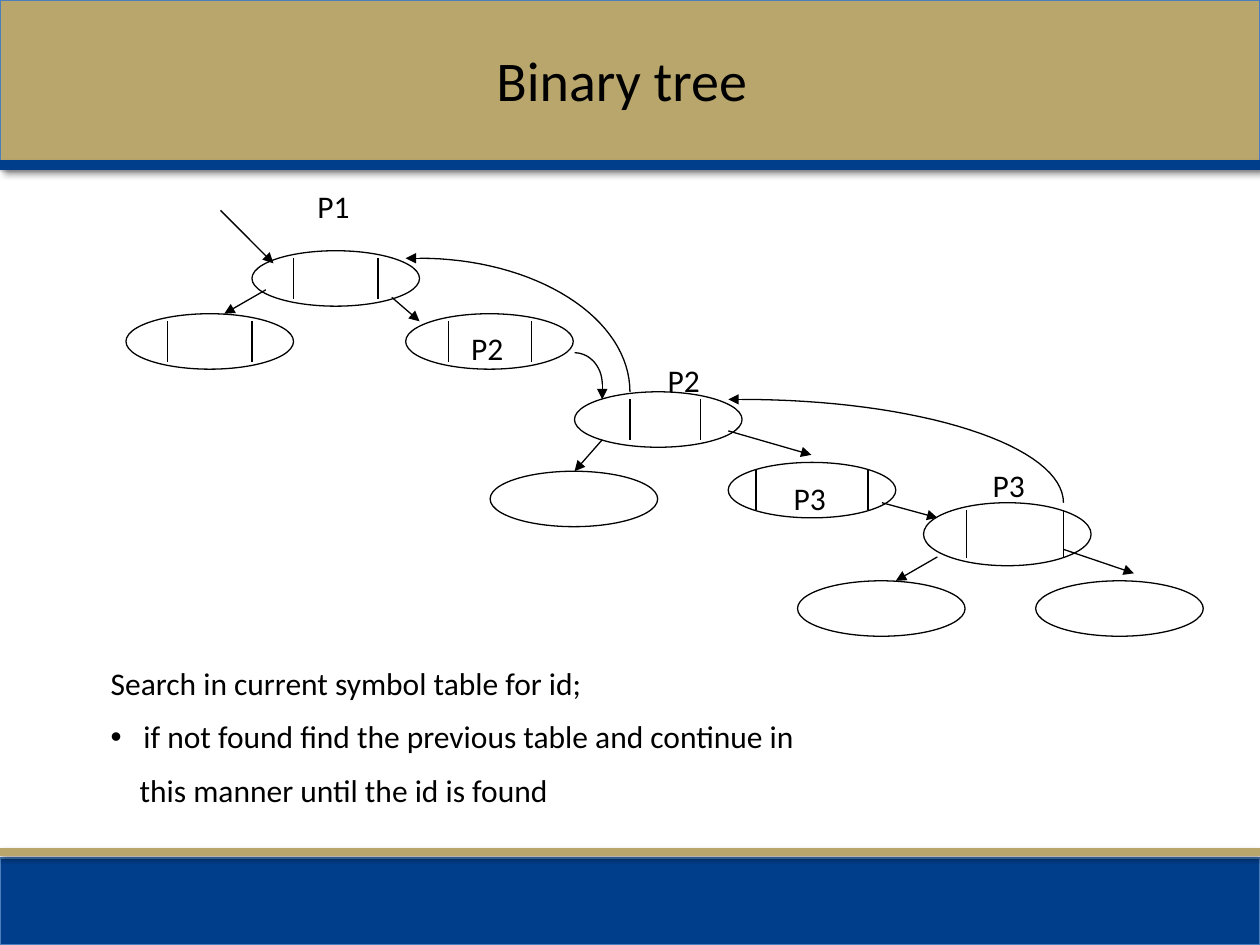
import math

from lxml import etree
from pptx import Presentation
from pptx.dml.color import RGBColor
from pptx.enum.shapes import MSO_CONNECTOR, MSO_SHAPE
from pptx.enum.text import MSO_ANCHOR, MSO_AUTO_SIZE, PP_ALIGN
from pptx.oxml.ns import qn
from pptx.util import Inches, Pt

STRAIGHT = MSO_CONNECTOR.STRAIGHT
OVAL = MSO_SHAPE.OVAL
RECTANGLE = MSO_SHAPE.RECTANGLE
LEFT = PP_ALIGN.LEFT
MIDDLE = MSO_ANCHOR.MIDDLE
TOP = MSO_ANCHOR.TOP
NO_AUTOSIZE = MSO_AUTO_SIZE.NONE

BLACK, GOLD, BLUE, EDGE = "000000", "B8A66C", "003E8C", "4B7EBC"
FONT = "Calibri"
SLIDE_WIDTH, SLIDE_HEIGHT = 10, 7.5
NODE_WIDTH, NODE_HEIGHT, DIVIDER_INSET = 1.33, 0.44, 0.06
ARC_STEPS = 32

NODES = [
    (2, 1.99, NODE_HEIGHT, (2.33, 3)),
    (1, 2.49, NODE_HEIGHT, (1.33, 2)),
    (3.22, 2.49, NODE_HEIGHT, (3.56, 4.22)),
    (4.56, 3.11, NODE_HEIGHT, (5, 5.56)),
    (3.89, 3.74, NODE_HEIGHT, ()),
    (5.78, 3.67, NODE_HEIGHT, (6, 6.89)),
    (7.33, 3.99, 0.5, (7.67, 8.44)),
    (8.22, 4.61, NODE_HEIGHT, ()),
    (6.33, 4.61, NODE_HEIGHT, ()),
]
LABELS = [
    ("P1", 2.42, 1.42),
    ("P2", 3.64, 2.55),
    ("P2", 5.2, 2.8),
    ("P3", 6.2, 3.74),
    ("P3", 7.78, 3.63),
]
ARROWS = [
    (1.75, 1.67, 2.17, 2.09),
    (2.11, 2.3, 1.78, 2.49),
    (3.11, 2.36, 3.33, 2.55),
    (4.78, 3.49, 4.56, 3.74),
    (5.78, 3.42, 6.44, 3.61),
    (7, 3.99, 7.44, 4.11),
    (7.44, 4.42, 7.11, 4.61),
    (8.44, 4.36, 9, 4.55),
    (3.33, 2.05, 3.22, 2.05),
    (6, 3.17, 5.78, 3.17),
    (4.78, 3.05, 4.78, 3.17),
]
ARCS = [
    (3.33, 2.05, 1.67, 1.06),
    (5.89, 3.17, 2.55, 0.82),
    (4.56, 2.8, 0.22, 0.25),
]
BODY = [
    ("Search in current symbol table for id;", 0, False),
    ("if not found find the previous table and continue in", 0.26, True),
    ("this manner until the id is found", 0.23, False),
]


def color(value):
    return RGBColor.from_string(value)


def set_line(shape, value, width):
    shape.line.color.rgb = color(value)
    shape.line.width = Pt(width)


def set_shadow(shape, opacity, blur, distance, angle):
    properties = shape._element.spPr
    for effects in properties.findall(qn("a:effectLst")):
        properties.remove(effects)
    effects = etree.SubElement(properties, qn("a:effectLst"))
    shadow = etree.SubElement(
        effects, qn("a:outerShdw"), blurRad=str(Pt(blur)), dist=str(Pt(distance)),
        dir=str(angle * 60000), algn="ctr", rotWithShape="0")
    shade = etree.SubElement(shadow, qn("a:srgbClr"), val=BLACK)
    etree.SubElement(shade, qn("a:alpha"), val=str(opacity * 1000))


def add_line(slide, x1, y1, x2, y2, value=BLACK, width=0.75, arrow=False):
    line = slide.shapes.add_connector(
        STRAIGHT, Inches(x1), Inches(y1), Inches(x2), Inches(y2))
    set_line(line, value, width)
    if arrow:
        etree.SubElement(line.line._get_or_add_ln(), qn("a:tailEnd"), type="triangle")
    etree.SubElement(line._element.spPr, qn("a:effectLst"))
    return line


def add_bar(slide, top, height, fill):
    bar = slide.shapes.add_shape(
        RECTANGLE, 0, Inches(top), Inches(SLIDE_WIDTH), Inches(height))
    bar.fill.solid()
    bar.fill.fore_color.rgb = color(fill)
    set_line(bar, EDGE, 0.75)
    set_shadow(bar, 35, 3.1, 1.8, 90)


def add_rule(slide, y, value, width, shadow):
    rule = add_line(slide, 0, y, SLIDE_WIDTH, y, value, width)
    set_shadow(rule, *shadow)


def add_node(slide, left, top, height, dividers):
    node = slide.shapes.add_shape(
        OVAL, Inches(left), Inches(top), Inches(NODE_WIDTH), Inches(height))
    node.shadow.inherit = False
    node.fill.background()
    set_line(node, BLACK, 0.75)
    for x in dividers:
        add_line(slide, x, top + DIVIDER_INSET, x, top + height - DIVIDER_INSET)


def add_arc(slide, left, top, width, height):
    angles = [math.pi / 2 * step / ARC_STEPS for step in range(ARC_STEPS + 1)]
    points = [(Inches(left + width * math.sin(angle)),
               Inches(top + height * (1 - math.cos(angle)))) for angle in angles]
    builder = slide.shapes.build_freeform(*points[0])
    builder.add_line_segments(points[1:], close=False)
    arc = builder.convert_to_shape()
    arc.shadow.inherit = False
    arc.fill.background()
    set_line(arc, BLACK, 0.75)


def format_paragraph(paragraph, text, size):
    paragraph.text = text
    paragraph.alignment = LEFT
    paragraph.font.name = FONT
    paragraph.font.size = Pt(size)
    paragraph.font.color.rgb = color(BLACK)


def add_text_box(slide, left, top, width, height, anchor):
    box = slide.shapes.add_textbox(
        Inches(left), Inches(top), Inches(width), Inches(height))
    frame = box.text_frame
    frame.word_wrap = True
    frame.vertical_anchor = anchor
    return frame


def add_label(slide, text, left, top):
    frame = add_text_box(slide, left, top, 0.52, 0.43, MIDDLE)
    format_paragraph(frame.paragraphs[0], text, 18)


def add_body(slide):
    frame = add_text_box(slide, 0.78, 5.22, 8.78, 1.43, TOP)
    for index, (text, indent, bulleted) in enumerate(BODY):
        paragraph = frame.add_paragraph() if index else frame.paragraphs[0]
        if index:
            paragraph.space_before = Pt(9)
        properties = paragraph._p.get_or_add_pPr()
        properties.set("marL", str(Inches(indent)))
        if bulleted:
            properties.set("indent", str(-Inches(indent)))
            etree.SubElement(properties, qn("a:buFont"), typeface="Arial")
            etree.SubElement(properties, qn("a:buChar"), char="•")
        format_paragraph(paragraph, text, 18)


def place_title(slide, text):
    title = slide.shapes.title
    title.left, title.top = Inches(3.84), Inches(0.31)
    title.width, title.height = Inches(2.21), Inches(0.64)
    frame = title.text_frame
    frame.word_wrap = False
    frame.auto_size = NO_AUTOSIZE
    frame.vertical_anchor = MIDDLE
    format_paragraph(frame.paragraphs[0], text, 32)
    slide.shapes._spTree.append(title._element)


def main():
    presentation = Presentation()
    presentation.slide_width = Inches(SLIDE_WIDTH)
    presentation.slide_height = Inches(SLIDE_HEIGHT)
    slide = presentation.slides.add_slide(presentation.slide_layouts[5])
    add_bar(slide, 0, 1.3, GOLD)
    add_bar(slide, 6.81, 0.69, BLUE)
    add_rule(slide, 6.76, GOLD, 4.5, (38, 3.1, 1.6, 90))
    add_rule(slide, 1.31, BLUE, 6, (40, 4, 3, 45))
    place_title(slide, "Binary tree")
    add_body(slide)
    for node in NODES:
        add_node(slide, *node)
    for label in LABELS:
        add_label(slide, *label)
    for arc in ARCS:
        add_arc(slide, *arc)
    for arrow in ARROWS:
        add_line(slide, *arrow, arrow=True)
    presentation.save("out.pptx")


if __name__ == "__main__":
    main()
